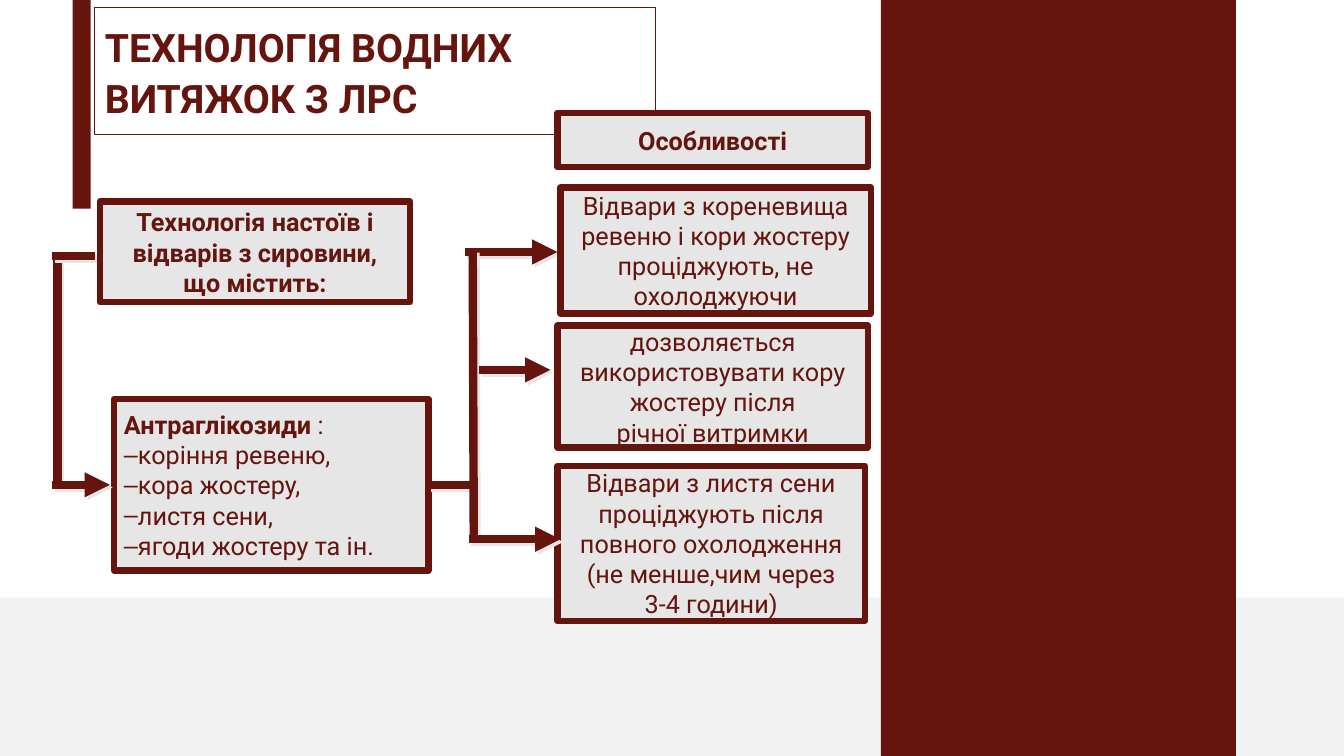
import dataclasses

import lxml.etree
import pptx
import pptx.dml.color
import pptx.enum.shapes
import pptx.enum.text
import pptx.oxml
import pptx.oxml.ns
import pptx.util

# Grid: 160 columns by 90 rows over the whole slide
COLUMNS, ROWS = 160, 90
WIDTH, HEIGHT = pptx.util.Inches(13.33), pptx.util.Inches(7.5)
MAROON, PANEL_GREY, BAND_GREY, SHADOW = "65140E", "E6E6E6", "F2F2F2", "E7E6E6"
FONT = "Roboto"
CENTER = pptx.enum.text.PP_ALIGN.CENTER
LEFT = pptx.enum.text.PP_ALIGN.LEFT


@dataclasses.dataclass(frozen=True)
class Area:
    col: float
    row: float
    cols: float
    rows: float


@dataclasses.dataclass(frozen=True)
class Card:
    area: Area
    lines: tuple[str, ...]
    bold: bool = False


@dataclasses.dataclass(frozen=True)
class Link:
    start: tuple[float, float]
    end: tuple[float, float]
    arrow: bool = False


BACKDROP = [
    (Area(0, 71.16, 160, 18.84), BAND_GREY),
    (Area(8.64, 0, 2.16, 24.84), MAROON),
    (Area(104.88, 0, 42.24, 90), MAROON),
]
TITLE_AREA = Area(11.28, 0.84, 66.72, 15.12)
GLYCOSIDES_AREA = Area(13.56, 47.52, 37.44, 20.4)
RAW_MATERIALS = ["коріння ревеню,", "кора жостеру,", "листя сени,", "ягоди жостеру та ін."]
CARDS = [
    Card(Area(11.88, 24, 36.96, 12),
         ("Технологія настоїв і", "відварів з сировини,", "що містить:"), True),
    Card(Area(66.36, 13.44, 36.96, 6.48), ("Особливості",), True),
    Card(Area(66.72, 22.32, 36.96, 15),
         ("Відвари з кореневища", "ревеню і кори жостеру", "проціджують, не охолоджуючи")),
    Card(Area(66.36, 38.76, 36.96, 14.52),
         ("дозволяється використовувати кору жостеру після", "річної витримки")),
    Card(Area(66.36, 55.44, 36.6, 18.48),
         ("Відвари з листя сени проціджують після", "повного охолодження",
          "(не менше,чим через", "3-4 години)")),
]
LINKS_BEHIND = [
    Link((6.84, 30.48), (6.84, 57.72)),
    Link((6.24, 30.48), (11.28, 30.48)),
    Link((6.24, 57.72), (13.08, 57.72), True),
    Link((51, 57.72), (56.4, 57.72)),
    Link((55.32, 30), (66.36, 30), True),
]
LINKS_IN_FRONT = [
    Link((56.28, 29.76), (56.4, 64.08)),
    Link((55.8, 64.2), (66.72, 64.2), True),
    Link((57, 44.04), (65.52, 44.04), True),
]


def x(col: float) -> int:
    return round(WIDTH * col / COLUMNS)


def y(row: float) -> int:
    return round(HEIGHT * row / ROWS)


def color(value: str) -> pptx.dml.color.RGBColor:
    return pptx.dml.color.RGBColor.from_string(value)


def place(shape, area: Area) -> None:
    shape.left, shape.top = x(area.col), y(area.row)
    shape.width, shape.height = x(area.cols), y(area.rows)


def outline(shape, points: float) -> None:
    shape.line.color.rgb = color(MAROON)
    shape.line.width = pptx.util.Pt(points)


def prepare_text(shape):
    frame = shape.text_frame
    frame.word_wrap = True
    frame.auto_size = pptx.enum.text.MSO_AUTO_SIZE.NONE
    frame.vertical_anchor = pptx.enum.text.MSO_ANCHOR.MIDDLE
    return frame


def add_run(paragraph, text: str, bold: bool = False, size: float = 18) -> None:
    run = paragraph.add_run()
    run.text = text
    run.font.name, run.font.size, run.font.bold = FONT, pptx.util.Pt(size), bold
    run.font.color.rgb = color(MAROON)


def add_block(slide, area: Area, fill: str):
    block = slide.shapes.add_shape(
        pptx.enum.shapes.MSO_SHAPE.RECTANGLE,
        x(area.col), y(area.row), x(area.cols), y(area.rows))
    block.shadow.inherit = False
    block.fill.solid()
    block.fill.fore_color.rgb = color(fill)
    block.line.fill.background()
    return block


def add_card(slide, card: Card) -> None:
    block = add_block(slide, card.area, PANEL_GREY)
    outline(block, 4.5)
    paragraph = prepare_text(block).paragraphs[0]
    paragraph.alignment = CENTER
    for index, line in enumerate(card.lines):
        if index:
            paragraph.add_line_break()
        add_run(paragraph, line, card.bold)


def add_link(slide, link: Link) -> None:
    connector = slide.shapes.add_connector(
        pptx.enum.shapes.MSO_CONNECTOR.STRAIGHT,
        x(link.start[0]), y(link.start[1]), x(link.end[0]), y(link.end[1]))
    outline(connector, 6)
    qn = pptx.oxml.ns.qn
    if link.arrow:
        lxml.etree.SubElement(connector.line._get_or_add_ln(), qn("a:tailEnd"), type="triangle")
    # Offset shadow at 45 degrees
    effects = lxml.etree.SubElement(connector._element.spPr, qn("a:effectLst"))
    shadow = lxml.etree.SubElement(effects, qn("a:outerShdw"), dist=str(pptx.util.Pt(2.8)),
                                   dir="2700000", algn="ctr", rotWithShape="0")
    lxml.etree.SubElement(shadow, qn("a:srgbClr"), val=SHADOW)


def set_bullet(paragraph, mark: str = "") -> None:
    qn = pptx.oxml.ns.qn
    properties = paragraph._p.get_or_add_pPr()
    properties.set("marL", "0")
    properties.set("indent", "0")
    if mark:
        lxml.etree.SubElement(properties, qn("a:buChar"), char=mark)
    else:
        lxml.etree.SubElement(properties, qn("a:buNone"))


def fill_title(title) -> None:
    place(title, TITLE_AREA)
    outline(title, 0.75)
    paragraph = prepare_text(title).paragraphs[0]
    paragraph.alignment = LEFT
    paragraph.line_spacing = pptx.util.Pt(36)
    add_run(paragraph, "ТЕХНОЛОГІЯ ВОДНИХ ВИТЯЖОК З ЛРС", True, 28)


def fill_glycosides(body) -> None:
    place(body, GLYCOSIDES_AREA)
    body.fill.solid()
    body.fill.fore_color.rgb = color(PANEL_GREY)
    outline(body, 4.5)
    frame = prepare_text(body)
    heading = frame.paragraphs[0]
    heading.space_before = pptx.util.Pt(0)
    set_bullet(heading)
    add_run(heading, "Антраглікозиди ", True)
    add_run(heading, ":")
    for material in RAW_MATERIALS:
        item = frame.add_paragraph()
        item.space_before = pptx.util.Pt(0)
        set_bullet(item, "–")
        add_run(item, material)


def main() -> None:
    deck = pptx.Presentation()
    deck.slide_width, deck.slide_height = WIDTH, HEIGHT
    slide = deck.slides.add_slide(deck.slide_layouts[1])

    # Title and list of raw materials
    fill_title(slide.shapes.title)
    fill_glycosides(slide.placeholders[1])

    # Backdrop, then the scheme from back to front
    for area, fill in BACKDROP:
        add_block(slide, area, fill)
    for link in LINKS_BEHIND:
        add_link(slide, link)
    for card in CARDS:
        add_card(slide, card)
    for link in LINKS_IN_FRONT:
        add_link(slide, link)

    deck.save("out.pptx")


if __name__ == "__main__":
    main()
